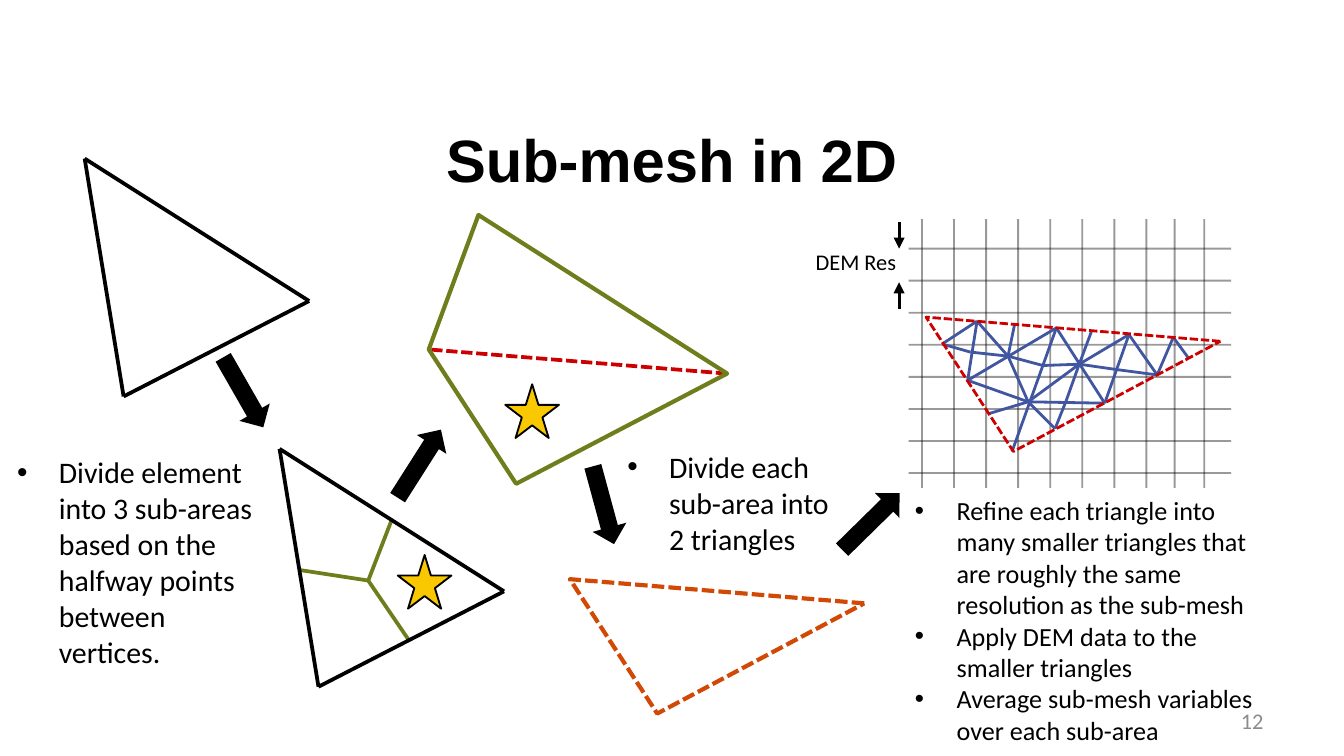
from dataclasses import dataclass

from lxml import etree
from pptx import Presentation
from pptx.dml.color import RGBColor
from pptx.enum.dml import MSO_LINE
from pptx.enum.shapes import MSO_CONNECTOR, MSO_SHAPE
from pptx.enum.text import MSO_ANCHOR, MSO_AUTO_SIZE, PP_ALIGN
from pptx.oxml.ns import qn
from pptx.util import Inches, Pt

DASH = MSO_LINE.SQUARE_DOT
STRAIGHT = MSO_CONNECTOR.STRAIGHT
ARROW, STAR = MSO_SHAPE.RIGHT_ARROW, MSO_SHAPE.STAR_5_POINT
LEFT, CENTER, RIGHT = PP_ALIGN.LEFT, PP_ALIGN.CENTER, PP_ALIGN.RIGHT
TOP, MIDDLE = MSO_ANCHOR.TOP, MSO_ANCHOR.MIDDLE
GROW, FIXED = MSO_AUTO_SIZE.SHAPE_TO_FIT_TEXT, MSO_AUTO_SIZE.NONE


@dataclass(frozen=True)
class Theme:
    black: str = "000000"
    green: str = "6F7D1C"
    red: str = "CC0000"
    orange: str = "D14905"
    blue: str = "4156A1"
    gold: str = "FAC800"
    gray: str = "8C8C8C"
    title_font: str = "Arial"
    body_font: str = "Calibri"
    title_size: int = 32
    step_size: int = 16
    detail_size: int = 14
    label_size: int = 12


THEME = Theme()

ELEMENT = [(0.63, 1.18), (0.92, 2.95), (2.3, 2.24)]
SPLIT_SHIFT = (1.45, 2.16)
CENTROID = (2.74, 4.32)
HALFWAY_POINTS = [(3.04, 4.76), (2.22, 4.24), (2.91, 3.88)]
SUB_AREA = [(3.56, 1.6), (5.41, 2.78), (3.84, 3.6), (3.19, 2.6)]
SUB_TRIANGLE = [(6.43, 4.49), (4.24, 4.31), (4.89, 5.31)]
REFINED_SHIFT = (2.65, -1.95)

# Refined mesh: one letter per node, two letters per edge
MESH_NODES = {
    "a": (7.27, 2.39), "b": (7.01, 2.56), "c": (7.2, 2.83), "d": (7.22, 2.62),
    "e": (7.5, 2.65), "f": (7.55, 2.41), "g": (7.86, 2.44), "h": (7.65, 2.99),
    "i": (7.53, 3.36), "j": (7.35, 3.08), "k": (7.85, 3.19), "l": (7.93, 2.99),
    "m": (8.03, 2.71), "n": (8.12, 2.47), "o": (8.4, 2.49), "p": (8.31, 2.75),
    "q": (8.61, 2.79), "r": (8.22, 3), "s": (8.73, 2.51), "t": (8.84, 2.66),
    "u": (7.76, 2.72),
}
MESH_EDGES = ("gi gr ro cg ac ab ch hr oq qs mo hk hj eh ae ef hm pq mp lm kl "
              "nm st ue mu ed db").split()


def shifted(points, shift):
    return [(x + shift[0], y + shift[1]) for x, y in points]


def style_line(line, color, width, dash=None):
    line.color.rgb = RGBColor.from_string(color)
    line.width = Pt(width)
    if dash is not None:
        line.dash_style = dash


def add_line(shapes, start, end, color, width, dash=None, alpha=None, arrow=False):
    segment = shapes.add_connector(STRAIGHT, *map(Inches, (*start, *end)))
    style_line(segment.line, color, width, dash)
    properties = segment._element.spPr
    if alpha is not None:
        tint = properties.find(".//" + qn("a:srgbClr"))
        etree.SubElement(tint, qn("a:alpha"), val=str(alpha * 1000))
    if arrow:
        outline = properties.find(qn("a:ln"))
        etree.SubElement(outline, qn("a:tailEnd"), type="triangle")
    etree.SubElement(properties, qn("a:effectLst"))


def add_outline(shapes, points, color, width, dash=None):
    corners = [(Inches(x), Inches(y)) for x, y in points]
    builder = shapes.build_freeform(*corners[0])
    builder.add_line_segments(corners[1:], close=True)
    outline = builder.convert_to_shape()
    outline.fill.background()
    outline.shadow.inherit = False
    style_line(outline.line, color, width, dash)


def add_marker(shapes, kind, box, fill, rotation=0, edge=None):
    marker = shapes.add_shape(kind, *map(Inches, box))
    marker.rotation = rotation
    marker.shadow.inherit = False
    marker.fill.solid()
    marker.fill.fore_color.rgb = RGBColor.from_string(fill)
    if edge:
        style_line(marker.line, edge, 1)
    else:
        marker.line.fill.background()


def add_bullet(paragraph):
    properties = paragraph._p.get_or_add_pPr()
    properties.set("marL", str(Inches(0.31)))
    properties.set("indent", str(-Inches(0.31)))
    etree.SubElement(properties, qn("a:buFont"), typeface="Arial")
    etree.SubElement(properties, qn("a:buChar"), char="•")


def add_text(shapes, box, lines, size, color=THEME.black, font=THEME.body_font,
             bold=False, align=LEFT, anchor=TOP, bullets=False, wrap=True, fit=FIXED):
    frame = shapes.add_textbox(*map(Inches, box)).text_frame
    frame.text = "\n".join(lines)
    frame.word_wrap = wrap
    frame.auto_size = fit
    frame.vertical_anchor = anchor
    for paragraph in frame.paragraphs:
        paragraph.alignment = align
        if bullets:
            add_bullet(paragraph)
        for run in paragraph.runs:
            run.font.name = font
            run.font.size = Pt(size)
            run.font.bold = bold
            run.font.color.rgb = RGBColor.from_string(color)


def add_triangle_edges(shapes, corners):
    first, second, third = corners
    for start, end in ((first, second), (first, third), (second, third)):
        add_line(shapes, start, end, THEME.black, 2)


def add_dem_grid(shapes):
    cell = 1.67 / 7
    columns = [6.86 + cell * i for i in range(8)] + [8.74, 8.96]
    rows = [1.85 + cell * i for i in range(8)]
    for x in columns:
        add_line(shapes, (x, 1.63), (x, 3.63), THEME.black, 1, alpha=40)
    for y in rows:
        add_line(shapes, (9.16, y), (6.76, y), THEME.black, 1, alpha=40)


def add_refined_mesh(shapes):
    for start, end in MESH_EDGES:
        add_line(shapes, MESH_NODES[start], MESH_NODES[end], THEME.blue, 1.5)
    add_outline(shapes, shifted(SUB_TRIANGLE, REFINED_SHIFT), THEME.red, 1.5, DASH)


def main():
    deck = Presentation()
    # Widescreen, 16:9
    deck.slide_width, deck.slide_height = Inches(10), Inches(10 * 9 / 16)
    shapes = deck.slides.add_slide(deck.slide_layouts[6]).shapes

    # Dividing lines inside the sub-area and the element
    add_line(shapes, SUB_AREA[1], SUB_AREA[3], THEME.red, 2, DASH)
    for halfway in HALFWAY_POINTS:
        add_line(shapes, CENTROID, halfway, THEME.green, 2)

    add_text(shapes, (0.5, 0.74, 9, 0.88), ["Sub-mesh in 2D"], THEME.title_size,
             font=THEME.title_font, bold=True, align=CENTER, anchor=MIDDLE)

    # Element, sub-area and sub-triangle
    add_triangle_edges(shapes, ELEMENT)
    add_triangle_edges(shapes, shifted(ELEMENT, SPLIT_SHIFT))
    add_outline(shapes, SUB_AREA, THEME.green, 2.25)
    add_outline(shapes, SUB_TRIANGLE, THEME.orange, 2.25, DASH)

    # Refined triangle over the DEM grid, with its resolution mark
    add_dem_grid(shapes.add_group_shape().shapes)
    add_refined_mesh(shapes.add_group_shape().shapes)
    for tail, tip in ((1.65, 1.85), (2.3, 2.1)):
        add_line(shapes, (6.69, tail), (6.69, tip), THEME.black, 1.5, arrow=True)
    add_text(shapes, (5.97, 1.8, 0.81, 0.3), ["DEM Res"], THEME.label_size,
             wrap=False, fit=GROW)

    # Arrows between steps, stars on the chosen sub-area
    for x, y, angle in ((1.51, 2.79, 60.2), (4.19, 3.63, 74.8),
                        (6.18, 3.75, 315.5), (2.82, 3.32, 302.5)):
        add_marker(shapes, ARROW, (x, y, 0.6, 0.26), THEME.black, rotation=angle)
    for x, y in ((2.96, 4.13), (3.76, 2.86)):
        add_marker(shapes, STAR, (x, y, 0.4, 0.4), THEME.gold, edge=THEME.black)

    # Step descriptions
    steps = [
        ((0.03, 3.33, 2.02, 1.72), THEME.step_size,
         ["Divide element into 3 sub-areas based on the halfway points between vertices."]),
        ((4.57, 3.29, 1.85, 0.91), THEME.step_size,
         ["Divide each sub-area into 2 triangles"]),
        ((6.71, 3.63, 2.9, 1.99), THEME.detail_size,
         ["Refine each triangle into many smaller triangles that are roughly "
          "the same resolution as the sub-mesh",
          "Apply DEM data to the smaller triangles",
          "Average sub-mesh variables over each sub-area"]),
    ]
    for box, size, lines in steps:
        add_text(shapes, box, lines, size, bullets=True, fit=GROW)

    # Page number
    add_text(shapes, (7.17, 5.21, 2.33, 0.3), ["12"], THEME.label_size,
             color=THEME.gray, align=RIGHT, anchor=MIDDLE)

    deck.save("out.pptx")


if __name__ == "__main__":
    main()
